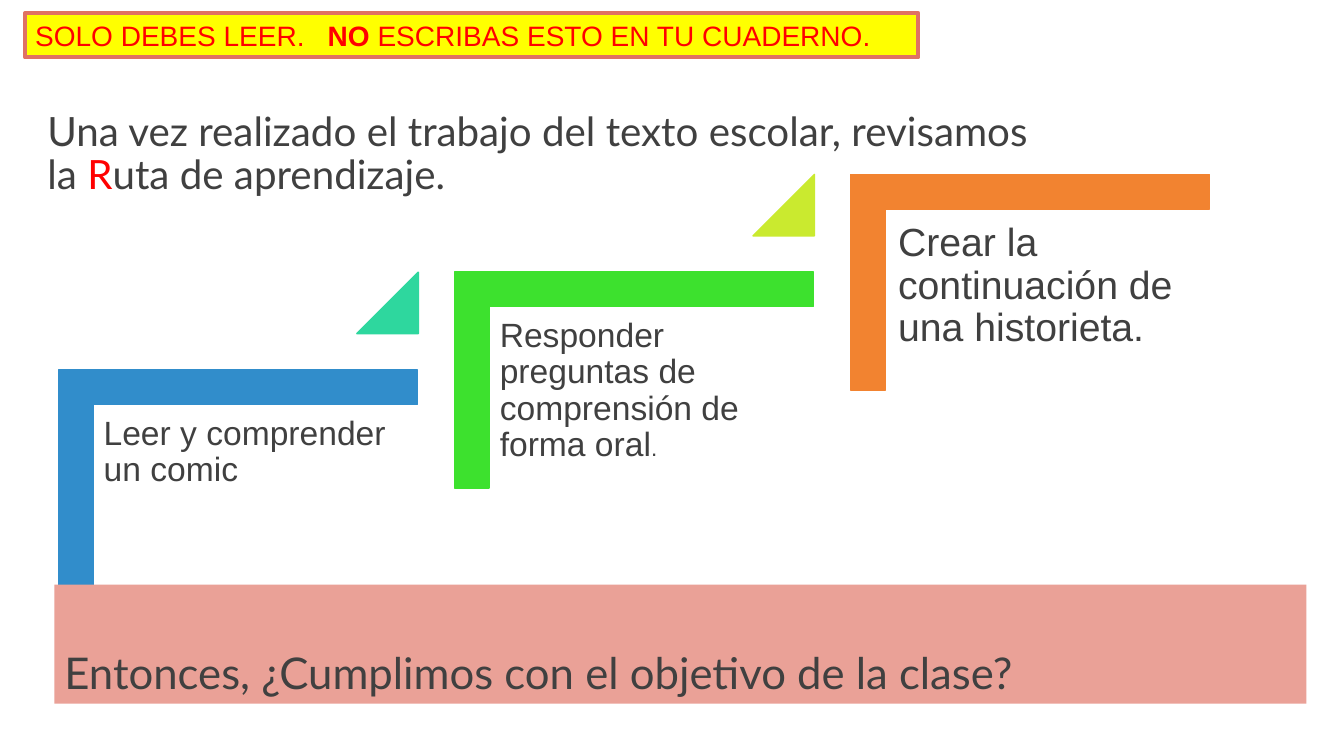
from lxml import etree
from pptx import Presentation
from pptx.dml.color import RGBColor
from pptx.enum import shapes, text
from pptx.oxml import ns
from pptx.util import Pt

DARK = RGBColor(0x40, 0x40, 0x40)
RED = RGBColor(0xFF, 0x00, 0x00)
YELLOW = RGBColor(0xFF, 0xFF, 0x00)
CORAL = RGBColor(0xE0, 0x72, 0x63)
PINK = RGBColor(0xEA, 0xA1, 0x97)
BLUE = RGBColor(0x31, 0x8D, 0xCB)
TEAL = RGBColor(0x2E, 0xD7, 0x9E)
GREEN = RGBColor(0x3D, 0xE1, 0x2E)
LIME = RGBColor(0xCA, 0xEA, 0x2F)
ORANGE = RGBColor(0xF2, 0x83, 0x30)


def add_run(paragraph, wording, size, font, color=DARK, bold=False):
    run = paragraph.add_run()
    run.text = wording
    run.font.size = Pt(size)
    run.font.name = font
    run.font.bold = bold
    run.font.color.rgb = color


def add_figure(parent, kind, left, top, width, height, fill, line=None, weight=1):
    figure = parent.add_shape(kind, Pt(left), Pt(top), Pt(width), Pt(height))
    figure.shadow.inherit = False
    figure.fill.solid()
    figure.fill.fore_color.rgb = fill
    if line is None:
        figure.line.fill.background()
    else:
        figure.line.color.rgb = line
        figure.line.width = Pt(weight)
    return figure


deck = Presentation()
deck.slide_width, deck.slide_height = Pt(960), Pt(540)
slide = deck.slides.add_slide(deck.slide_layouts[5])

# Title
title = slide.shapes.title
title.left, title.top, title.width, title.height = Pt(26.64), Pt(60.48), Pt(850.32), Pt(84.96)
title.text_frame.word_wrap = True
title.text_frame.auto_size = text.MSO_AUTO_SIZE.NONE
title.text_frame.vertical_anchor = text.MSO_ANCHOR.BOTTOM
heading = title.text_frame.paragraphs[0]
heading.alignment = text.PP_ALIGN.LEFT
heading.line_spacing = 0.9
add_run(heading, "Una vez realizado el trabajo del texto escolar, revisamos", 28.8, "Lato")
heading.add_line_break()
add_run(heading, "la ", 28.8, "Lato")
add_run(heading, "R", 28.8, "Lato", RED)
add_run(heading, "uta de aprendizaje.", 28.8, "Lato")

# Learning route: three rising steps, with a triangle after each but the last
steps = [
    (BLUE, TEAL, 7.2, [("Leer y comprender un comic", 24)]),
    (GREEN, LIME, 7.2, [("Responder preguntas de comprensión de forma oral", 24), (".", 16)]),
    (ORANGE, None, 8.64, [("Crear la continuación de una historieta.", 28)]),
]
STEP_X, STEP_Y = 282.96, -69.84
route = slide.shapes.add_group_shape().shapes
for index, (step_color, triangle_color, inset, wording) in enumerate(steps):
    dx, dy = index * STEP_X, index * STEP_Y
    corner = add_figure(route, shapes.MSO_SHAPE.CORNER, 92.88 + dx, 213.12 + dy,
                        154.08, 256.32, step_color, step_color)
    corner.rotation = 90
    corner.adjustments[0] = corner.adjustments[1] = 0.16

    goal = route.add_textbox(Pt(66.96 + dx), Pt(290.16 + dy), Pt(231.12), Pt(202.32)).text_frame
    goal.word_wrap = True
    goal.margin_left = goal.margin_right = goal.margin_top = goal.margin_bottom = Pt(inset)
    goal.paragraphs[0].line_spacing = 0.9
    for words, size in wording:
        add_run(goal.paragraphs[0], words, size, "Arial")

    if triangle_color is not None:
        triangle = add_figure(route, shapes.MSO_SHAPE.ISOSCELES_TRIANGLE, 254.88 + dx, 194.4 + dy,
                              43.92, 43.92, triangle_color, triangle_color)
        triangle.adjustments[0] = 1

# Reading notice, with a tab stop before the bold word
notice = add_figure(slide.shapes, shapes.MSO_SHAPE.RECTANGLE, 18, 9.36, 637.92, 31.68,
                    YELLOW, CORAL, 3).text_frame
notice.word_wrap = True
notice.vertical_anchor = text.MSO_ANCHOR.TOP
instruction = notice.paragraphs[0]
instruction.alignment = text.PP_ALIGN.LEFT
tabs = etree.SubElement(instruction._p.get_or_add_pPr(), ns.qn("a:tabLst"))
etree.SubElement(tabs, ns.qn("a:tab"), pos=str(Pt(209)), algn="l")
add_run(instruction, "SOLO DEBES LEER.\t", 20, "Arial", RED)
add_run(instruction, "NO", 20, "Arial", RED, True)
add_run(instruction, " ESCRIBAS ESTO EN TU CUADERNO.", 20, "Arial", RED)

# Closing question
closing = add_figure(slide.shapes, shapes.MSO_SHAPE.RECTANGLE, 38.88, 417.6, 894.24, 84.96,
                     PINK).text_frame
closing.word_wrap = True
closing.vertical_anchor = text.MSO_ANCHOR.BOTTOM
question = closing.paragraphs[0]
question.alignment = text.PP_ALIGN.LEFT
question.line_spacing = 0.9
add_run(question, "Entonces, ¿Cumplimos con el objetivo de la clase?", 31.2, "Lato")

deck.save("out.pptx")
